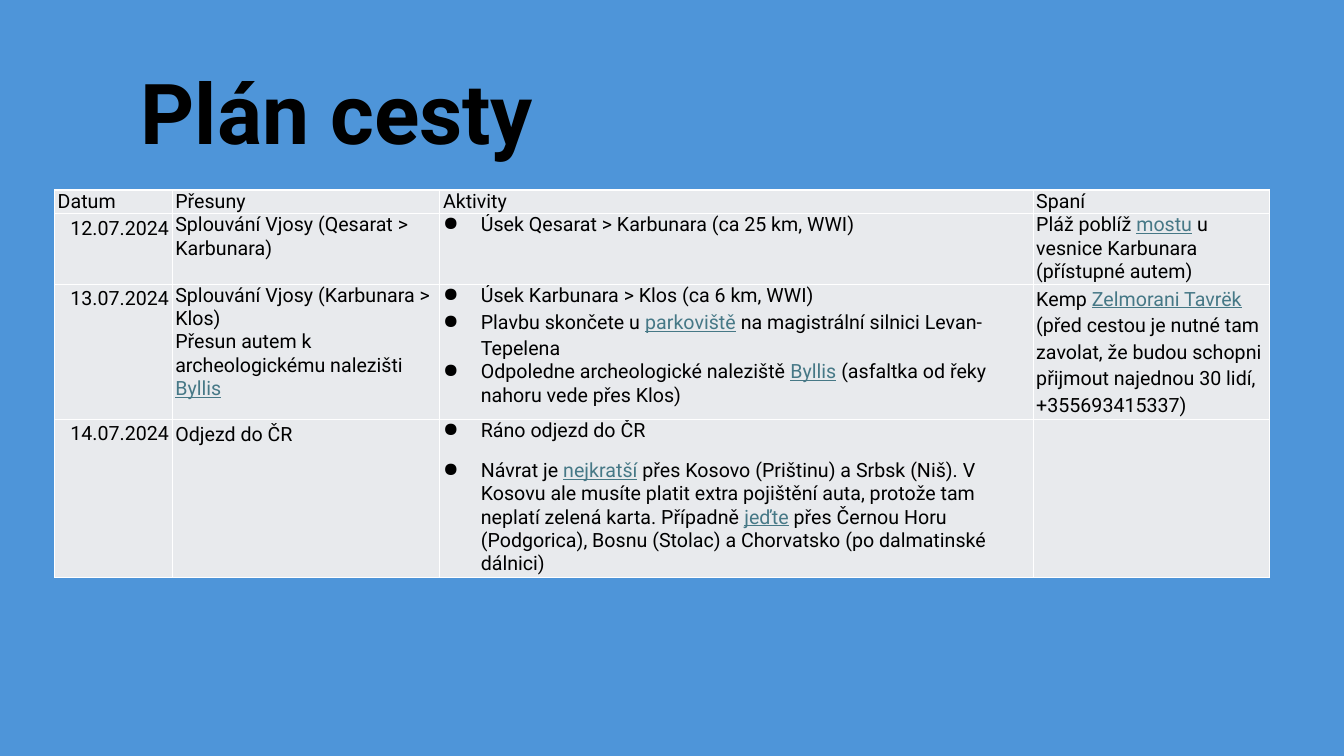
"""Build the travel plan slide with its itinerary table."""
from dataclasses import dataclass

import lxml.etree
import pptx
import pptx.dml.color
import pptx.enum.text
import pptx.oxml.ns
import pptx.util

EMU_PER_PX = 9525
FONT = "Roboto"
BLACK, WHITE, SKY, CELL_GREY, LINK = "000000", "FFFFFF", "4E95D9", "E8EAED", "467886"
ALIGN = pptx.enum.text.PP_ALIGN
ANCHOR = pptx.enum.text.MSO_ANCHOR
LINK_MARK = "*"
BULLET_INDENT = 36
SIDE_INSET = 3
COLUMN_WIDTHS = (112, 255, 565, 225)
ROW_HEIGHTS = (21, 67, 127, 148)


@dataclass(frozen=True)
class Line:
    """One paragraph; text between asterisks is styled as a link."""
    text: str
    size: int = 14
    bold: bool = False
    align: ALIGN = ALIGN.LEFT
    spacing: float = 1.0
    after: int = 0
    bullet: bool = False


@dataclass(frozen=True)
class Entry:
    """The content of one table cell."""
    lines: tuple[Line, ...]
    anchor: ANCHOR = ANCHOR.TOP
    inset: int = 0


def heading(text: str) -> Entry:
    """Return a column heading."""
    return Entry((Line(text),), ANCHOR.BOTTOM)


def date(text: str) -> Entry:
    """Return a right-aligned date."""
    return Entry((Line(text, align=ALIGN.RIGHT),), inset=3)


def entry(*lines: Line) -> Entry:
    """Return a plain cell."""
    return Entry(lines)


TITLE = Line("Plán cesty", size=60, bold=True, align=ALIGN.CENTER, spacing=0.9)
ITINERARY = (
    tuple(heading(name) for name in ("Datum", "Přesuny", "Aktivity", "Spaní")),
    (
        date("12.07.2024"),
        entry(Line("Splouvání Vjosy (Qesarat > Karbunara)")),
        entry(Line("Úsek Qesarat > Karbunara (ca 25 km, WWI)", bullet=True)),
        entry(Line("Pláž poblíž *mostu* u vesnice Karbunara (přístupné autem)")),
    ),
    (
        date("13.07.2024"),
        entry(
            Line("Splouvání Vjosy (Karbunara > Klos)"),
            Line("Přesun autem k archeologickému nalezišti *Byllis*"),
        ),
        entry(
            Line("Úsek Karbunara > Klos (ca 6 km, WWI)", bullet=True),
            Line("Plavbu skončete u *parkoviště* na magistrální silnici Levan-Tepelena",
                 spacing=1.15, bullet=True),
            Line("Odpoledne archeologické naleziště *Byllis* "
                 "(asfaltka od řeky nahoru vede přes Klos)", bullet=True),
        ),
        entry(Line("Kemp *Zelmorani Tavrëk* (před cestou je nutné tam zavolat, že budou "
                   "schopni přijmout najednou 30 lidí, +355693415337)", spacing=1.15)),
    ),
    (
        date("14.07.2024"),
        entry(Line("Odjezd do ČR", spacing=1.15)),
        entry(
            Line("Ráno odjezd do ČR", after=12, bullet=True),
            Line("Návrat je *nejkratší* přes Kosovo (Prištinu) a Srbsk (Niš). V Kosovu ale "
                 "musíte platit extra pojištění auta, protože tam neplatí zelená karta. "
                 "Případně *jeďte* přes Černou Horu (Podgorica), Bosnu (Stolac) a Chorvatsko "
                 "(po dalmatinské dálnici)", after=12, bullet=True),
        ),
        entry(),
    ),
)


def px(length: int) -> pptx.util.Emu:
    """Turn px into EMU."""
    return pptx.util.Emu(length * EMU_PER_PX)


def rgb(value: str) -> pptx.dml.color.RGBColor:
    """Turn a hex string into a colour."""
    return pptx.dml.color.RGBColor.from_string(value)


def add_bullet(paragraph) -> None:
    """Give a paragraph a hanging round bullet."""
    properties = paragraph._p.get_or_add_pPr()
    properties.set("marL", str(px(BULLET_INDENT)))
    properties.set("indent", str(-px(BULLET_INDENT)))
    lxml.etree.SubElement(properties, pptx.oxml.ns.qn("a:buChar"), char="●")


def write_line(paragraph, line: Line) -> None:
    """Fill a paragraph with a line and its links."""
    paragraph.alignment = line.align
    paragraph.line_spacing = line.spacing
    paragraph.space_after = pptx.util.Pt(line.after)
    if line.bullet:
        add_bullet(paragraph)
    paragraph.font.name = FONT
    paragraph.font.size = pptx.util.Pt(line.size)
    paragraph.font.bold = line.bold
    paragraph.font.color.rgb = rgb(BLACK)
    for position, text in enumerate(line.text.split(LINK_MARK)):
        if not text:
            continue
        run = paragraph.add_run()
        run.text = text
        if position % 2:
            run.font.underline = True
            run.font.color.rgb = rgb(LINK)


def write_lines(frame, lines: tuple[Line, ...]) -> None:
    """Write each line as a paragraph of a text frame."""
    for position, line in enumerate(lines):
        write_line(frame.add_paragraph() if position else frame.paragraphs[0], line)


def add_borders(cell) -> None:
    """Draw a thin white line on each side of a cell."""
    properties = cell._tc.get_or_add_tcPr()
    for position, side in enumerate(("lnL", "lnR", "lnT", "lnB")):
        border = lxml.etree.Element(pptx.oxml.ns.qn(f"a:{side}"), w=str(pptx.util.Pt(1)))
        fill = lxml.etree.SubElement(border, pptx.oxml.ns.qn("a:solidFill"))
        lxml.etree.SubElement(fill, pptx.oxml.ns.qn("a:srgbClr"), val=WHITE)
        properties.insert(position, border)


def fill_cell(cell, content: Entry) -> None:
    """Style a cell and write its content."""
    cell.margin_left = cell.margin_right = px(SIDE_INSET)
    cell.margin_top = cell.margin_bottom = px(content.inset)
    cell.vertical_anchor = content.anchor
    cell.fill.solid()
    cell.fill.fore_color.rgb = rgb(CELL_GREY)
    add_borders(cell)
    write_lines(cell.text_frame, content.lines)


def add_title(slide) -> None:
    """Add the slide title."""
    title = slide.shapes.add_textbox(px(52), px(47), px(538), px(113))
    title.text_frame.word_wrap = True
    title.text_frame.vertical_anchor = ANCHOR.BOTTOM
    write_lines(title.text_frame, (TITLE,))


def add_itinerary(slide) -> None:
    """Add the itinerary table."""
    itinerary = slide.shapes.add_table(
        len(ROW_HEIGHTS), len(COLUMN_WIDTHS), px(52), px(181),
        px(sum(COLUMN_WIDTHS)), px(sum(ROW_HEIGHTS))).table
    itinerary.first_row = itinerary.horz_banding = False
    for column, width in zip(itinerary.columns, COLUMN_WIDTHS):
        column.width = px(width)
    for row, height, entries in zip(itinerary.rows, ROW_HEIGHTS, ITINERARY):
        row.height = px(height)
        for cell, content in zip(row.cells, entries):
            fill_cell(cell, content)


def main() -> None:
    """Build and save the presentation."""
    presentation = pptx.Presentation()
    presentation.slide_width, presentation.slide_height = px(1280), px(720)
    slide = presentation.slides.add_slide(presentation.slide_layouts[6])
    slide.background.fill.solid()
    slide.background.fill.fore_color.rgb = rgb(SKY)
    add_title(slide)
    add_itinerary(slide)
    presentation.save("out.pptx")


if __name__ == "__main__":
    main()
